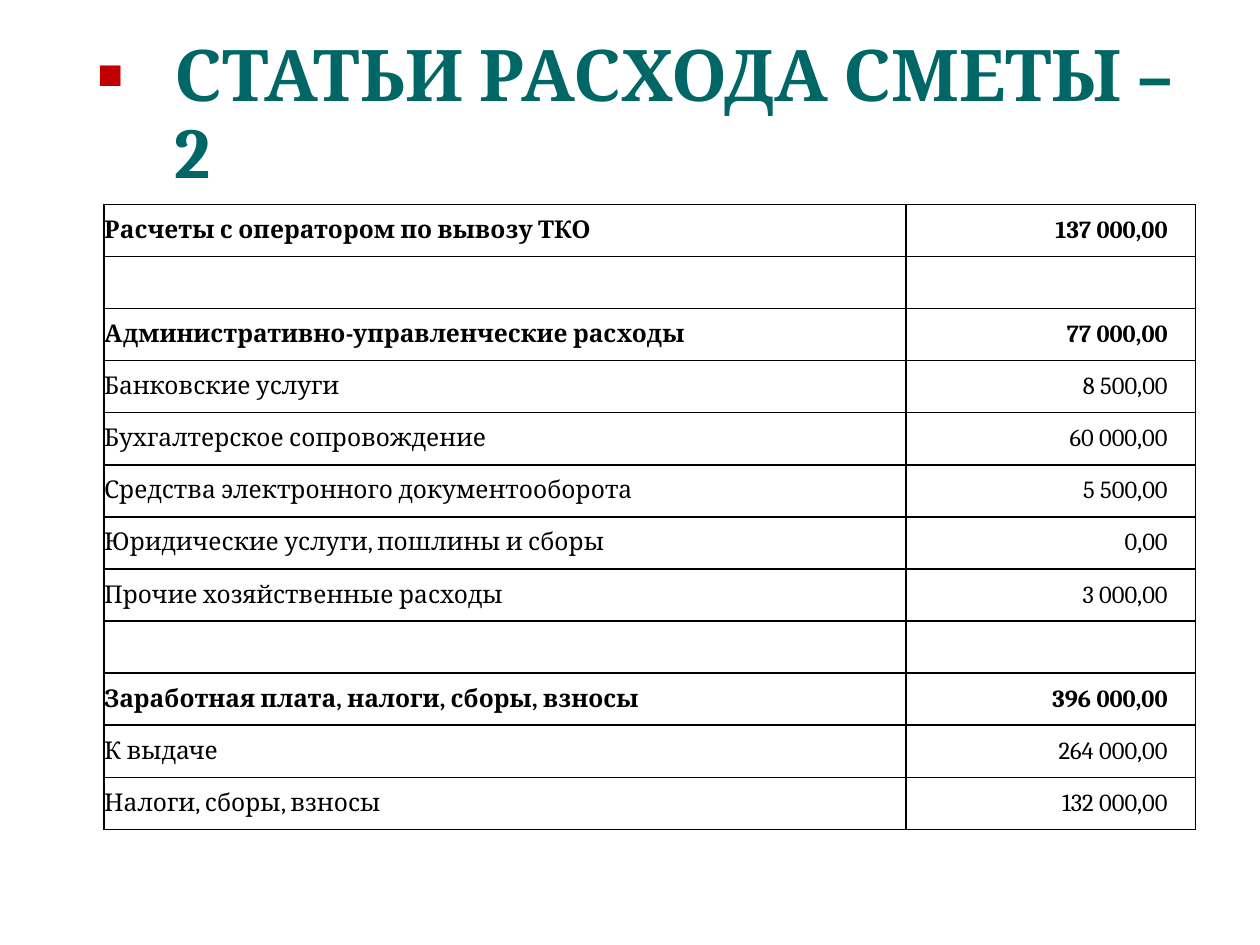
import lxml.etree
import pptx
import pptx.dml.color
import pptx.enum.text
import pptx.oxml.ns
import pptx.util
from pptx.util import Cm

ROWS = [
    ("Расчеты с оператором по вывозу ТКО", "137 000,00", True),
    ("", "", False),
    ("Административно-управленческие расходы", "77 000,00", True),
    ("Банковские услуги", "8 500,00", False),
    ("Бухгалтерское сопровождение", "60 000,00", False),
    ("Средства электронного документооборота", "5 500,00", False),
    ("Юридические услуги, пошлины и сборы", "0,00", False),
    ("Прочие хозяйственные расходы", "3 000,00", False),
    ("", "", False),
    ("Заработная плата, налоги, сборы, взносы", "396 000,00", True),
    ("К выдаче", "264 000,00", False),
    ("Налоги, сборы, взносы", "132 000,00", False),
]


def color(value):
    return pptx.dml.color.RGBColor.from_string(value)


def add_element(parent, tag, **attributes):
    return lxml.etree.SubElement(parent, pptx.oxml.ns.qn(tag), attributes)


class SlideBuilder:
    font = "Cambria"
    title_color = "006666"
    bullet_color = "C00000"
    text_color = "000000"
    title_size = 40.7
    table_size = 14

    def __init__(self, presentation):
        self.slide = presentation.slides.add_slide(presentation.slide_layouts[5])

    def format_text(self, paragraph, size, value, bold):
        for run in paragraph.runs:
            run.font.name = self.font
            run.font.size = pptx.util.Pt(size)
            run.font.bold = bold
            run.font.color.rgb = color(value)

    def add_title(self, text, left, top, width, height):
        shape = self.slide.shapes.title
        shape.left, shape.top, shape.width, shape.height = left, top, width, height
        frame = shape.text_frame
        frame.text = text
        frame.word_wrap = True
        frame.auto_size = pptx.enum.text.MSO_AUTO_SIZE.NONE
        frame.vertical_anchor = pptx.enum.text.MSO_ANCHOR.MIDDLE
        paragraph = frame.paragraphs[0]
        paragraph.alignment = pptx.enum.text.PP_ALIGN.LEFT
        paragraph.line_spacing = 0.9
        self.format_text(paragraph, self.title_size, self.title_color, True)
        self.add_bullet(paragraph, Cm(1.57))

    def add_bullet(self, paragraph, indent):
        properties = paragraph._p.get_or_add_pPr()
        properties.set("marL", str(indent))
        properties.set("indent", str(-indent))
        fill = add_element(properties, "a:buClr")
        add_element(fill, "a:srgbClr", val=self.bullet_color)
        add_element(properties, "a:buFont", typeface=self.font)
        add_element(properties, "a:buChar", char="▪")

    def add_borders(self, cell):
        properties = cell._tc.get_or_add_tcPr()
        for side in ("a:lnL", "a:lnR", "a:lnT", "a:lnB"):
            line = add_element(properties, side, w=str(pptx.util.Pt(1)))
            fill = add_element(line, "a:solidFill")
            add_element(fill, "a:srgbClr", val=self.text_color)

    def fill_cell(self, cell, text, bold, alignment, right_margin):
        cell.margin_left = cell.margin_top = cell.margin_bottom = 0
        cell.margin_right = right_margin
        cell.vertical_anchor = pptx.enum.text.MSO_ANCHOR.MIDDLE
        self.add_borders(cell)
        cell.fill.background()
        cell.text_frame.text = text
        paragraph = cell.text_frame.paragraphs[0]
        paragraph.alignment = alignment
        self.format_text(paragraph, self.table_size, self.text_color, bold)

    def add_table(self, rows, left, top, widths, row_height):
        table = self.slide.shapes.add_table(
            len(rows), len(widths), left, top, sum(widths), row_height * len(rows)
        ).table
        table.first_row = False
        table.horz_banding = False
        for column, width in zip(table.columns, widths):
            column.width = width
        align = pptx.enum.text.PP_ALIGN
        for row, (name, amount, bold) in zip(table.rows, rows):
            row.height = row_height
            self.fill_cell(row.cells[0], name, bold, align.LEFT, 0)
            self.fill_cell(row.cells[1], amount, bold, align.RIGHT, Cm(0.56))


def main():
    presentation = pptx.Presentation()
    presentation.slide_width = Cm(25.4)
    presentation.slide_height = Cm(19.05)
    builder = SlideBuilder(presentation)
    builder.add_title("СТАТЬИ РАСХОДА СМЕТЫ – 2", Cm(1.7), Cm(0.76), Cm(22.86), Cm(3.18))
    builder.add_table(ROWS, Cm(2.1), Cm(4.12), [Cm(16.16), Cm(5.84)], Cm(1.05))
    presentation.save("out.pptx")


if __name__ == "__main__":
    main()
